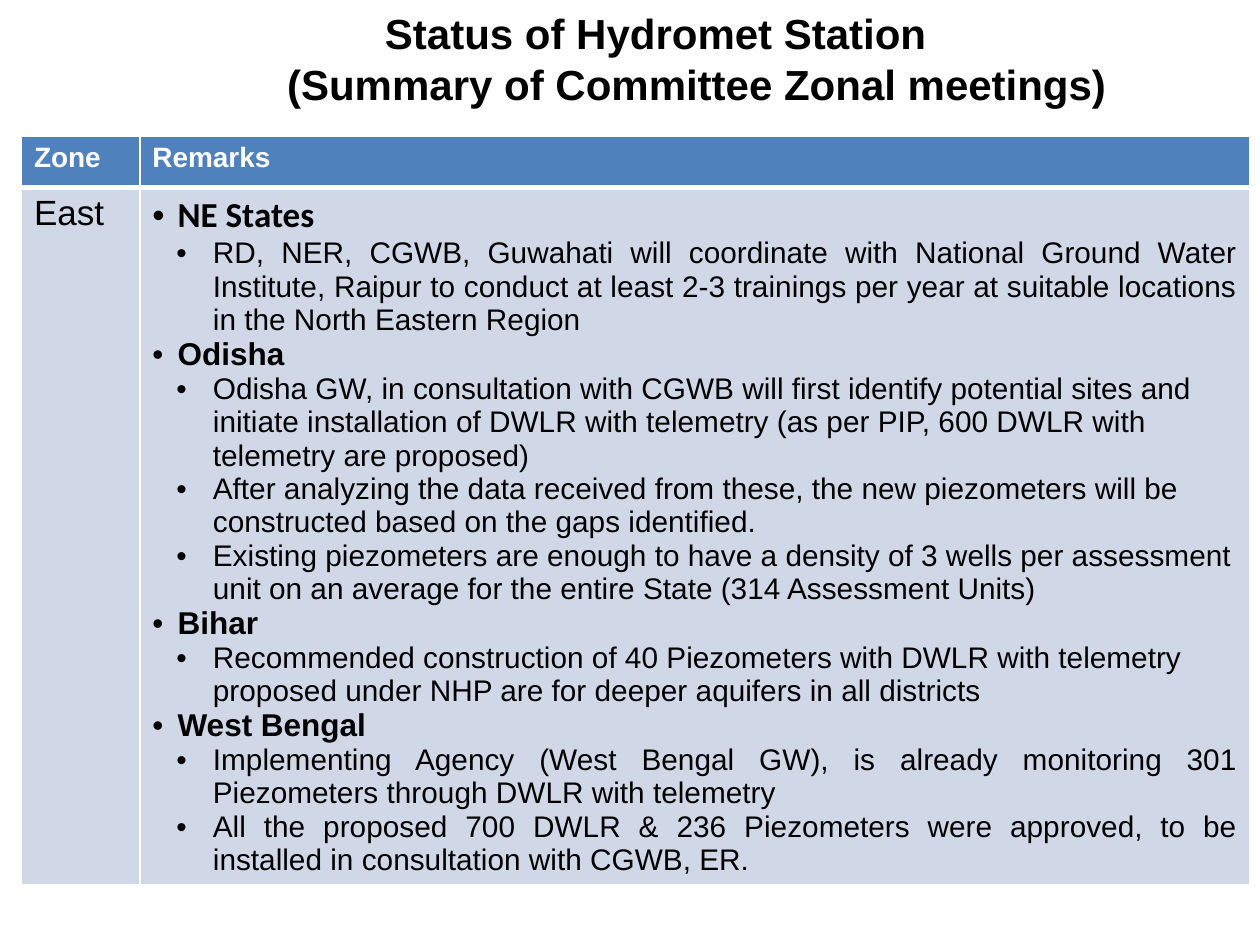
from lxml.etree import SubElement
from pptx import Presentation
from pptx.dml.color import RGBColor
from pptx.enum.text import MSO_ANCHOR, PP_ALIGN
from pptx.oxml.ns import qn
from pptx.util import Inches, Pt

BLUE, PALE, WHITE, BLACK = "4F81BD", "D0D8E8", "FFFFFF", "000000"

REMARKS = [
    ("NE States", 20, "Calibri", [
        ("RD, NER, CGWB, Guwahati will coordinate with National Ground Water Institute, Raipur "
         "to conduct at least 2-3 trainings per year at suitable locations in the North Eastern Region", True),
    ]),
    ("Odisha", 18, "Arial", [
        ("Odisha GW, in consultation with CGWB will first identify potential sites and initiate "
         "installation of DWLR with telemetry (as per PIP, 600 DWLR with telemetry are proposed)", False),
        ("After analyzing the data received from these, the new piezometers will be "
         "constructed based on the gaps identified.", False),
        ("Existing piezometers are enough to have a density of 3 wells per assessment unit "
         "on an average for the entire State (314 Assessment Units)", False),
    ]),
    ("Bihar", 18, "Arial", [
        ("Recommended construction of 40 Piezometers with DWLR with telemetry proposed under NHP "
         "are for deeper aquifers in all districts", False),
    ]),
    ("West Bengal", 18, "Arial", [
        ("Implementing Agency (West Bengal GW), is already monitoring 301 Piezometers "
         "through DWLR with telemetry", True),
        ("All the proposed 700 DWLR & 236 Piezometers were approved, to be installed "
         "in consultation with CGWB, ER.", True),
    ]),
]


def paint(target, color):
    """Give a fill or font a solid colour."""
    if hasattr(target, "solid"):
        target.solid()
        target.fore_color.rgb = RGBColor.from_string(color)
    else:
        target.color.rgb = RGBColor.from_string(color)


def add_run(para, text, size, color=BLACK, bold=False, face="Arial"):
    """Append one styled run to a paragraph."""
    run = para.add_run()
    run.text = text
    run.font.size = Pt(size)
    run.font.bold = bold
    run.font.name = face
    paint(run.font, color)


def indent(para, left, hang, mark=None):
    """Set a hanging indent and an optional bullet."""
    props = para._p.get_or_add_pPr()
    props.set("marL", str(Inches(left)))
    props.set("indent", str(-Inches(hang)))
    if mark:
        SubElement(props, qn("a:buFont")).set("typeface", "Arial")
        SubElement(props, qn("a:buChar")).set("char", mark)


def style_cell(cell, color, top, bottom):
    """Draw white cell borders and fill the cell."""
    props = cell._tc.get_or_add_tcPr()
    for side, width in zip("LRTB", (1, 1, top, bottom)):
        line = SubElement(props, qn(f"a:ln{side}"), w=str(Pt(width)))
        fill = SubElement(line, qn("a:solidFill"))
        SubElement(fill, qn("a:srgbClr")).set("val", WHITE)
    paint(cell.fill, color)


def fill_remarks(frame):
    """Write each state with its bulleted remarks."""
    para = frame.paragraphs[0]
    for state, size, face, notes in REMARKS:
        if para is None:
            para = frame.add_paragraph()
        indent(para, 0.2, 0.2, "•")
        add_run(para, state, size, bold=True, face=face)
        for note, full in notes:
            para = frame.add_paragraph()
            indent(para, 0.48, 0.29, "•")
            if full:
                para.alignment = PP_ALIGN.JUSTIFY
            add_run(para, note, 17)
        para = None


def add_grid(slide):
    """Add the table of zones and remarks."""
    table = slide.shapes.add_table(
        2, 2, Inches(0.17), Inches(1.08), Inches(9.75), Inches(5.94)).table
    for col, width in zip(table.columns, (0.94, 8.81)):
        col.width = Inches(width)
    for row, height in zip(table.rows, (0.41, 5.53)):
        row.height = Inches(height)
    for index, label in enumerate(("Zone", "Remarks")):
        head, body = table.cell(0, index), table.cell(1, index)
        style_cell(head, BLUE, 1, 3)
        style_cell(body, PALE, 3, 1)
        add_run(head.text_frame.paragraphs[0], label, 16, WHITE, True)
    add_run(table.cell(1, 0).text_frame.paragraphs[0], "East", 20)
    fill_remarks(table.cell(1, 1).text_frame)


def add_title(slide):
    """Add the two-line centred heading."""
    frame = slide.shapes.add_textbox(Inches(1), 0, Inches(8.5), Inches(0.92)).text_frame
    frame.word_wrap = True
    frame.vertical_anchor = MSO_ANCHOR.MIDDLE
    para = frame.paragraphs[0]
    para.alignment = PP_ALIGN.CENTER
    indent(para, 0.56, 0.56)
    add_run(para, "Status of Hydromet Station ", 24, bold=True)
    para.add_line_break()
    add_run(para, "(Summary of Committee Zonal meetings)", 24, bold=True)


def main():
    """Build and save the slide."""
    deck = Presentation()
    deck.slide_width, deck.slide_height = Inches(10), Inches(7.5)
    slide = deck.slides.add_slide(deck.slide_layouts[6])
    add_grid(slide)
    add_title(slide)
    deck.save("out.pptx")


if __name__ == "__main__":
    main()
